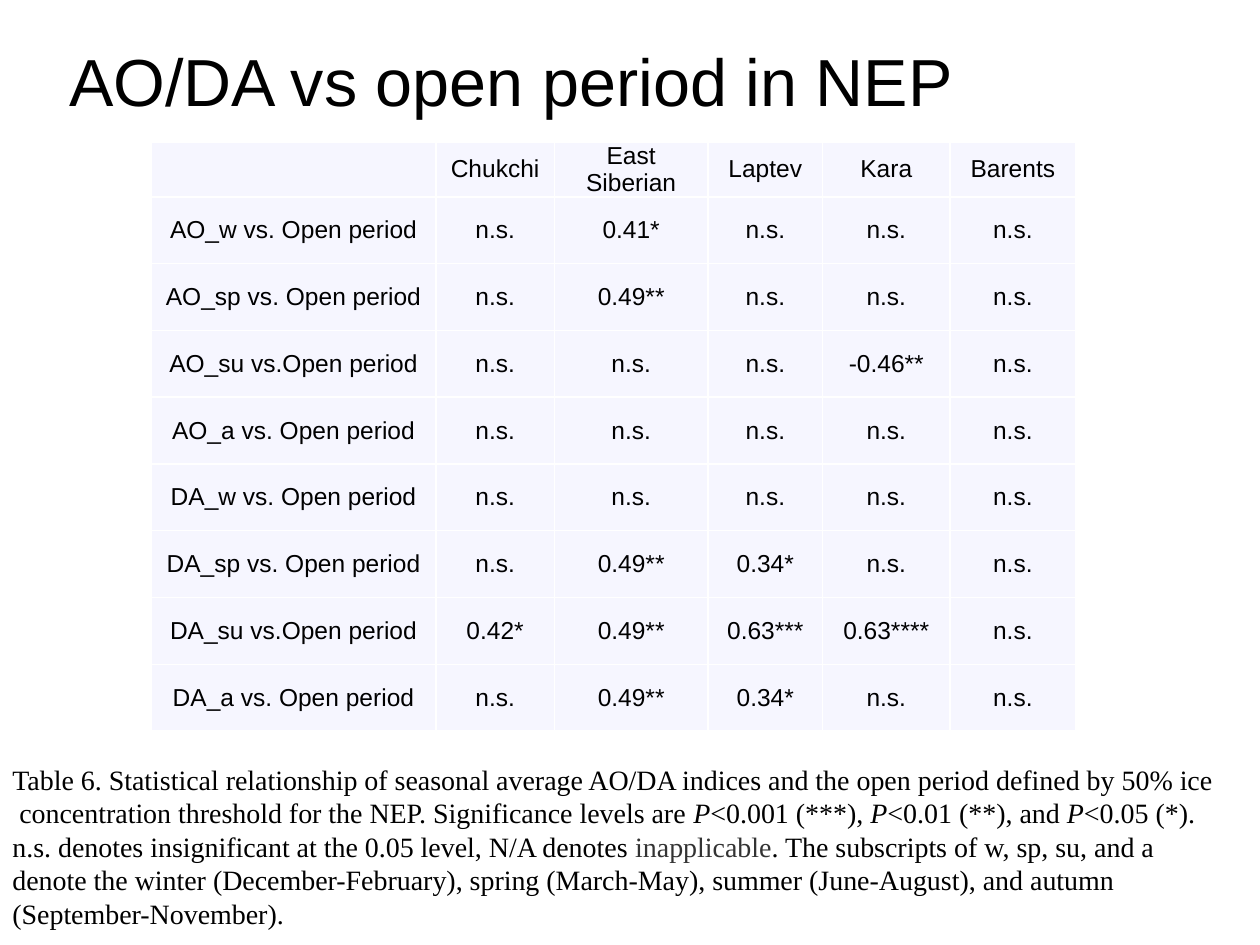
from dataclasses import dataclass

import pptx
import pptx.dml.color
import pptx.enum.text
import pptx.oxml
import pptx.oxml.ns
import pptx.util

Inches = pptx.util.Inches
Pt = pptx.util.Pt
Anchor = pptx.enum.text.MSO_ANCHOR
Align = pptx.enum.text.PP_ALIGN


@dataclass(frozen=True)
class Theme:
    sans: str = "Arial"
    serif: str = "Times New Roman"
    text: str = "000000"
    muted: str = "333333"
    cell: str = "F6F6FF"
    border: str = "FFFFFF"
    title_size: float = 38
    table_size: float = 14
    caption_size: float = 16
    border_width: float = 1


@dataclass(frozen=True)
class Box:
    """A place given as shares of the slide's width and height."""
    left: float
    top: float
    width: float
    height: float

    def emu(self) -> tuple[int, int, int, int]:
        return (int(self.left * SLIDE_W), int(self.top * SLIDE_H),
                int(self.width * SLIDE_W), int(self.height * SLIDE_H))


@dataclass(frozen=True)
class Span:
    text: str
    italic: bool = False
    color: str = Theme.text


@dataclass(frozen=True)
class Relation:
    """Correlations of one index with the open period; seas not named are n.s."""
    label: str
    values: dict[str, str]

    def cells(self) -> list[str]:
        return [self.label] + [self.values.get(sea, "n.s.") for sea in SEAS]


THEME = Theme()
SLIDE_W, SLIDE_H = Inches(10), Inches(7.5)
TITLE_BOX = Box(0.045, 0, 0.9, 0.17)
TABLE_BOX = Box(0.12, 0.15, 0.73, 0.63)
CAPTION_BOX = Box(0, 0.8, 0.99, 0.2)
COLUMN_WIDTHS = [2.26, 0.94, 1.22, 0.91, 1.01, 1]
HEADER_HEIGHT, ROW_HEIGHT = 0.4, 0.53

SEAS = ["Chukchi", "East Siberian", "Laptev", "Kara", "Barents"]
RELATIONS = [
    Relation("AO_w vs. Open period", {"East Siberian": "0.41*"}),
    Relation("AO_sp vs. Open period", {"East Siberian": "0.49**"}),
    Relation("AO_su vs.Open period", {"Kara": "-0.46**"}),
    Relation("AO_a vs. Open period", {}),
    Relation("DA_w vs. Open period", {}),
    Relation("DA_sp vs. Open period", {"East Siberian": "0.49**", "Laptev": "0.34*"}),
    Relation("DA_su vs.Open period", {"Chukchi": "0.42*", "East Siberian": "0.49**",
                                      "Laptev": "0.63***", "Kara": "0.63****"}),
    Relation("DA_a vs. Open period", {"East Siberian": "0.49**", "Laptev": "0.34*"}),
]
P_VALUE = Span("P", italic=True)
CAPTION = [
    [Span("Table 6. Statistical relationship of seasonal average AO/DA indices "
          "and the open period defined by 50% ice")],
    [Span(" concentration threshold for the NEP. Significance levels are "),
     P_VALUE, Span("<0.001 (***), "), P_VALUE, Span("<0.01 (**), and "),
     P_VALUE, Span("<0.05 (*).")],
    [Span("n.s. denotes insignificant at the 0.05 level, N/A denotes "),
     Span("inapplicable", color=THEME.muted),
     Span(". The subscripts of w, sp, su, and a")],
    [Span("denote the winter (December-February), spring (March-May), "
          "summer (June-August), and autumn")],
    [Span("(September-November).")],
]


def rgb(color: str) -> pptx.dml.color.RGBColor:
    return pptx.dml.color.RGBColor.from_string(color)


def format_font(font, name: str, size: float, color: str = THEME.text) -> None:
    font.name, font.size = name, Pt(size)
    font.color.rgb = rgb(color)


def add_borders(cell) -> None:
    tc_pr = cell._tc.get_or_add_tcPr()
    for i, side in enumerate(("lnL", "lnR", "lnT", "lnB")):
        tc_pr.insert(i, pptx.oxml.parse_xml(
            f'<a:{side} {pptx.oxml.ns.nsdecls("a")} w="{Pt(THEME.border_width)}">'
            f'<a:solidFill><a:srgbClr val="{THEME.border}"/></a:solidFill></a:{side}>'))


def fill_cell(cell, text: str) -> None:
    cell.fill.solid()
    cell.fill.fore_color.rgb = rgb(THEME.cell)
    add_borders(cell)
    cell.vertical_anchor = Anchor.MIDDLE
    cell.margin_left = cell.margin_right = Inches(0.07)
    cell.margin_top = cell.margin_bottom = 0
    p = cell.text_frame.paragraphs[0]
    p.alignment = Align.CENTER
    if text:
        p.text = text
        format_font(p.runs[0].font, THEME.sans, THEME.table_size)


def add_title(slide, text: str) -> None:
    sp = slide.shapes.title
    sp.left, sp.top, sp.width, sp.height = TITLE_BOX.emu()
    tf = sp.text_frame
    tf.text = text
    tf.vertical_anchor = Anchor.MIDDLE
    p = tf.paragraphs[0]
    p.alignment = Align.LEFT
    format_font(p.runs[0].font, THEME.sans, THEME.title_size)


def add_relations(slide) -> None:
    rows = [["", *SEAS], *(relation.cells() for relation in RELATIONS)]
    table = slide.shapes.add_table(
        len(rows), len(COLUMN_WIDTHS), *TABLE_BOX.emu()).table
    table.first_row = table.horz_banding = False
    for column, width in zip(table.columns, COLUMN_WIDTHS):
        column.width = Inches(width)
    for r, texts in enumerate(rows):
        table.rows[r].height = Inches(ROW_HEIGHT if r else HEADER_HEIGHT)
        for c, text in enumerate(texts):
            fill_cell(table.cell(r, c), text)


def add_caption(slide, lines: list[list[Span]]) -> None:
    tf = slide.shapes.add_textbox(*CAPTION_BOX.emu()).text_frame
    tf.word_wrap = True
    tf.vertical_anchor = Anchor.TOP
    for i, spans in enumerate(lines):
        p = tf.add_paragraph() if i else tf.paragraphs[0]
        for span in spans:
            r = p.add_run()
            r.text = span.text
            r.font.italic = span.italic
            format_font(r.font, THEME.serif, THEME.caption_size, span.color)


def main() -> None:
    prs = pptx.Presentation()
    prs.slide_width, prs.slide_height = SLIDE_W, SLIDE_H
    slide = prs.slides.add_slide(prs.slide_layouts.get_by_name("Title Only"))
    add_title(slide, "AO/DA vs open period in NEP")
    add_relations(slide)
    add_caption(slide, CAPTION)
    prs.save("out.pptx")


if __name__ == "__main__":
    main()
